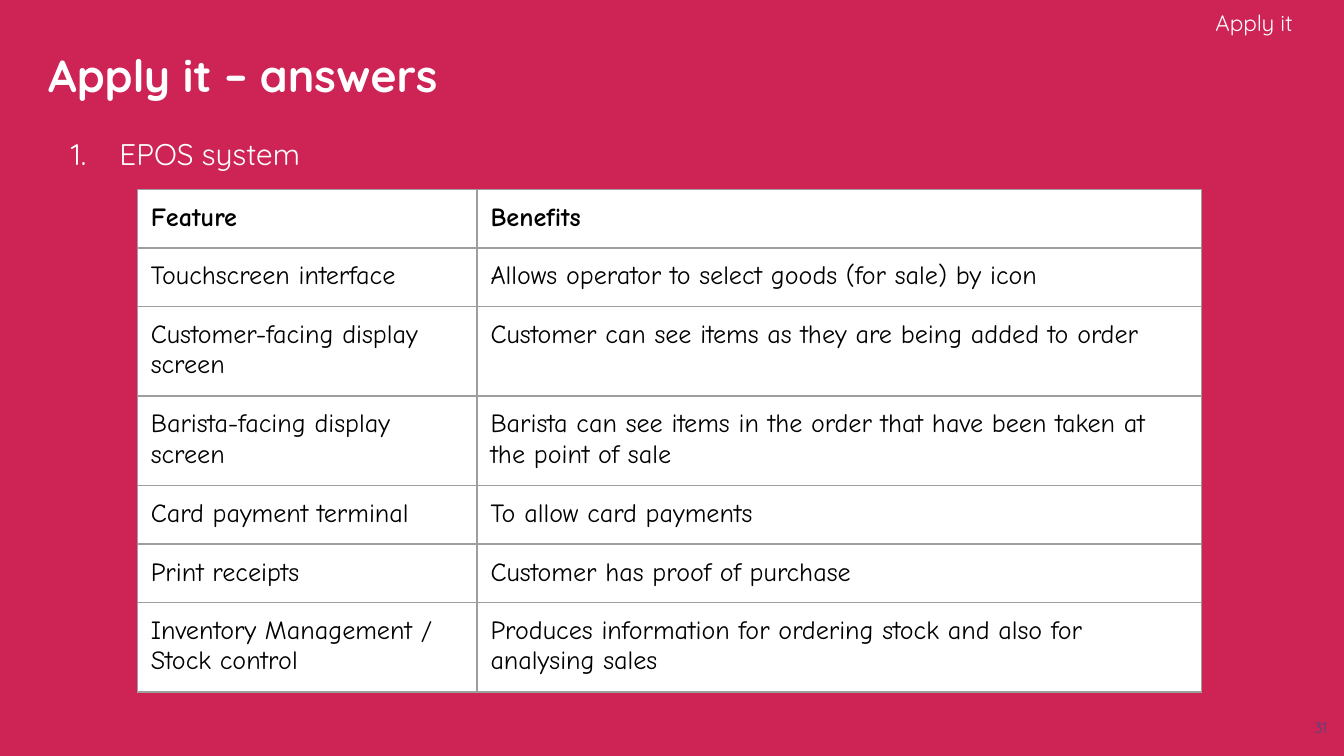
from dataclasses import dataclass

from lxml.etree import SubElement
from pptx import Presentation
from pptx.dml.color import RGBColor
from pptx.enum.text import MSO_ANCHOR, PP_ALIGN
from pptx.oxml.ns import qn
from pptx.util import Pt


@dataclass(frozen=True)
class Theme:
    back: str = "CD2355"
    white: str = "FFFFFF"
    black: str = "000000"
    page: str = "494985"
    rule: str = "9E9E9E"
    head: str = "Quicksand"
    body: str = "Comic Neue"
    title: int = 24
    item: int = 16
    cell: int = 14
    label: int = 12
    small: int = 8


theme = Theme()
PAD = Pt(7.2)


def style(para, face, size, color, bold=False):
    for run in para.runs:
        font = run.font
        font.name, font.size, font.bold = face, Pt(size), bold
        font.color.rgb = RGBColor.from_string(color)


def add_text(area, text, size, color, align=PP_ALIGN.LEFT,
             anchor=MSO_ANCHOR.TOP, right=PAD, bold=False):
    box = slide.shapes.add_textbox(*map(Pt, area))
    frame = box.text_frame
    frame.word_wrap = True
    frame.vertical_anchor = anchor
    frame.margin_left = frame.margin_top = frame.margin_bottom = PAD
    frame.margin_right = right
    frame.text = text
    para = frame.paragraphs[0]
    para.alignment = align
    style(para, theme.head, size, color, bold)
    return para


# Slide and background
deck = Presentation()
deck.slide_width, deck.slide_height = Pt(720), Pt(405)
slide = deck.slides.add_slide(deck.slide_layouts[6])
fill = slide.background.fill
fill.solid()
fill.fore_color.rgb = RGBColor.from_string(theme.back)

# Title, page number and corner label
add_text((18.7, 12.2, 671, 55.4), "Apply it – answers", theme.title,
         theme.white, anchor=MSO_ANCHOR.MIDDLE, bold=True)
add_text((695.5, 380.2, 24.5, 24.5), "31", theme.small, theme.page,
         align=PP_ALIGN.CENTER)
add_text((538.6, 0, 154, 24.5), "Apply it", theme.label, theme.white,
         align=PP_ALIGN.RIGHT, anchor=MSO_ANCHOR.MIDDLE, right=0)

# Numbered answer
item = add_text((20.9, 65.5, 675.4, 72.7), "EPOS system", theme.item,
                theme.white)
props = item._p.get_or_add_pPr()
props.set("marL", str(Pt(36)))
props.set("indent", str(Pt(-26)))
color = SubElement(props, qn("a:buClr"))
SubElement(color, qn("a:srgbClr"), val=theme.white)
SubElement(props, qn("a:buFont"), typeface=theme.head)
SubElement(props, qn("a:buAutoNum"), type="arabicPeriod")

# Features and benefits: text pairs with their row height
LOW, HIGH = 31.1, 48.1
rows = [
    ("Feature", "Benefits", LOW),
    ("Touchscreen interface",
     "Allows operator to select goods (for sale) by icon", LOW),
    ("Customer-facing display screen",
     "Customer can see items as they are being added to order", HIGH),
    ("Barista-facing display screen",
     "Barista can see items in the order that have been taken at "
     "the point of sale", HIGH),
    ("Card payment terminal", "To allow card payments", LOW),
    ("Print receipts", "Customer has proof of purchase", LOW),
    ("Inventory Management / Stock control",
     "Produces information for ordering stock and also for "
     "analysing sales", HIGH),
]
widths = (182, 388.2)
tall = sum(row[2] for row in rows)
table = slide.shapes.add_table(len(rows), len(widths), Pt(73.6), Pt(101.6),
                               Pt(sum(widths)), Pt(tall)).table
table.horz_banding = False
for col, width in zip(table.columns, widths):
    col.width = Pt(width)

for r, (*texts, height) in enumerate(rows):
    table.rows[r].height = Pt(height)
    for c, text in enumerate(texts):
        cell = table.cell(r, c)
        cell.text_frame.text = text
        style(cell.text_frame.paragraphs[0], theme.body, theme.cell,
              theme.black, bold=r == 0)
        cell.margin_left = cell.margin_right = PAD
        cell.margin_top = cell.margin_bottom = PAD
        # Borders come before the fill in the cell properties
        edges = cell._tc.get_or_add_tcPr()
        for side in ("lnL", "lnR", "lnT", "lnB"):
            line = SubElement(edges, qn(f"a:{side}"), w=str(Pt(0.75)))
            paint = SubElement(line, qn("a:solidFill"))
            SubElement(paint, qn("a:srgbClr"), val=theme.rule)
        cell.fill.solid()
        cell.fill.fore_color.rgb = RGBColor.from_string(theme.white)

deck.save("out.pptx")
